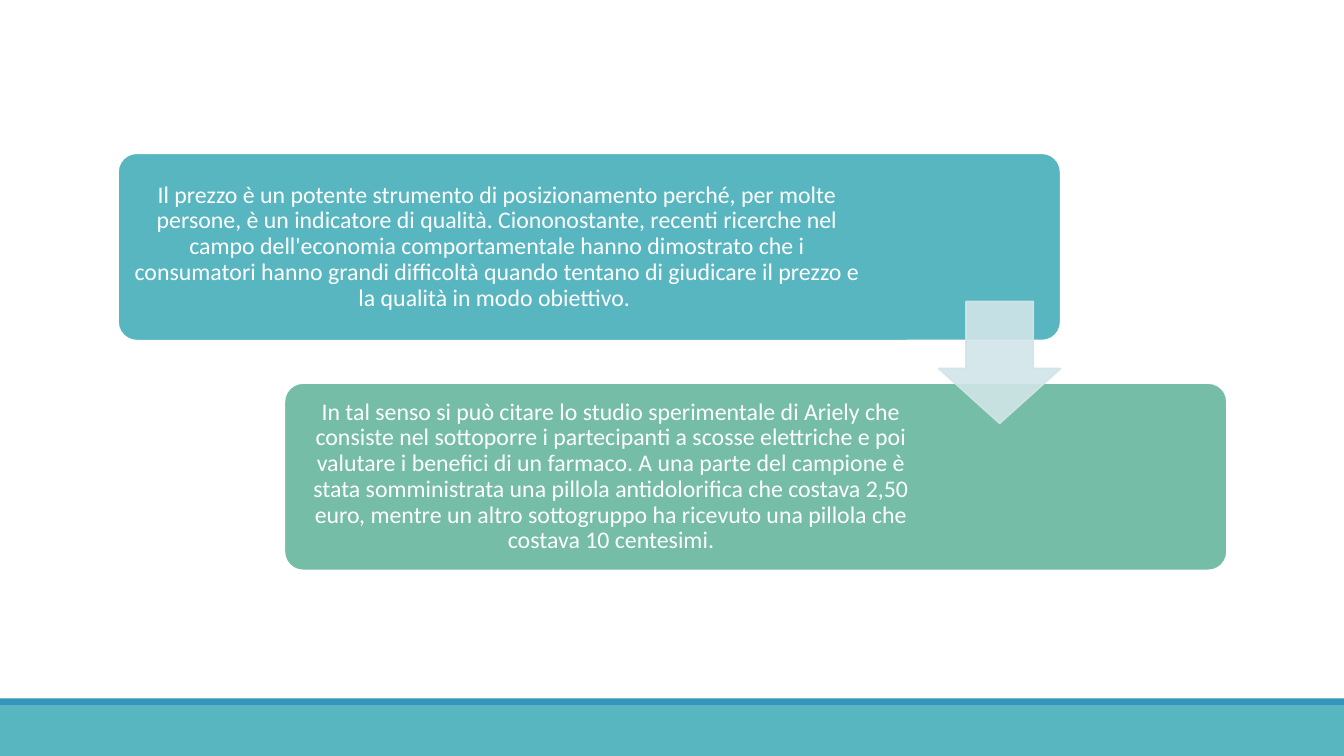
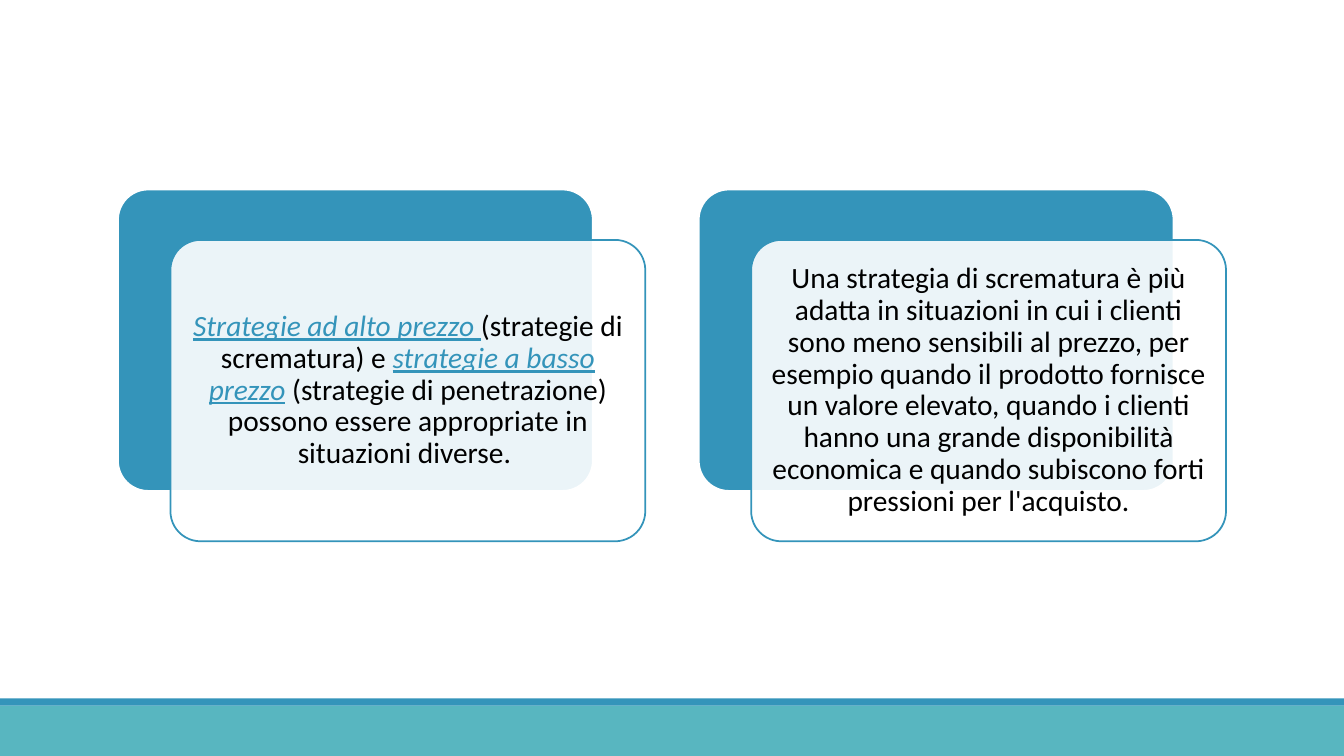
from dataclasses import dataclass

from lxml import etree
from pptx import Presentation
from pptx.dml.color import RGBColor
from pptx.enum.shapes import MSO_SHAPE
from pptx.enum.text import MSO_ANCHOR, PP_ALIGN
from pptx.oxml.ns import qn
from pptx.util import Inches, Pt

RECT = MSO_SHAPE.RECTANGLE
ROUND = MSO_SHAPE.ROUNDED_RECTANGLE
DOWN = MSO_SHAPE.DOWN_ARROW
CENTER = PP_ALIGN.CENTER
MIDDLE = MSO_ANCHOR.MIDDLE


@dataclass(frozen=True)
class Theme:
    blue: str = "3494BA"
    teal: str = "58B6C0"
    green: str = "75BDA7"
    pale: str = "D1E5E8"
    white: str = "FFFFFF"
    black: str = "000000"
    font: str = "Calibri"
    small: float = 17
    large: float = 21
    edge: float = 1.25
    sheer: int = 90


WIDTH, HEIGHT = 13.33, 7.5
LEFT = 1.17

STEPS = [
    ("Il prezzo è un potente strumento di posizionamento perché, per molte "
     "persone, è un indicatore di qualità. Ciononostante, recenti ricerche nel "
     "campo dell'economia comportamentale hanno dimostrato che i consumatori "
     "hanno grandi difficoltà quando tentano di giudicare il prezzo e la "
     "qualità in modo obiettivo. ", Theme.teal, 1.9),
    ("In tal senso si può citare lo studio sperimentale di Ariely che consiste "
     "nel sottoporre i partecipanti a scosse elettriche e poi valutare i "
     "benefici di un farmaco. A una parte del campione è stata somministrata "
     "una pillola antidolorifica che costava 2,50 euro, mentre un altro "
     "sottogruppo ha ricevuto una pillola che costava 10 centesimi.",
     Theme.green, 2.94),
]

# Each card is a list of (text, is a key term).
CARDS = [
    [("Strategie ad alto prezzo ", True),
     ("(strategie di scrematura) e ", False),
     ("strategie a basso prezzo", True),
     (" (strategie di penetrazione) possono essere appropriate in situazioni "
      "diverse. ", False)],
    [("Una strategia di scrematura è più adatta in situazioni in cui i clienti "
      "sono meno sensibili al prezzo, per esempio quando il prodotto fornisce "
      "un valore elevato, quando i clienti hanno una grande disponibilità "
      "economica e quando subiscono forti pressioni per l'acquisto.", False)],
]


def fade(part, alpha):
    """Make a solid fill or line partly transparent; alpha is in percent."""
    for color in part.iter(qn("a:srgbClr")):
        etree.SubElement(color, qn("a:alpha")).set("val", str(alpha * 1000))


class Deck:
    def __init__(self, theme):
        self.theme = theme
        self.prs = Presentation()
        self.prs.slide_width = Inches(WIDTH)
        self.prs.slide_height = Inches(HEIGHT)
        self.slide = None

    def start(self):
        """Add a slide with the bands at its foot."""
        self.slide = self.prs.slides.add_slide(self.prs.slide_layouts[6])
        self.shape(RECT, (0, 7, WIDTH, 0.5), self.theme.teal)
        self.shape(RECT, (0, 6.93, WIDTH, 0.07), self.theme.blue)

    def shape(self, kind, box, fill, line=None, adjust=()):
        shape = self.slide.shapes.add_shape(kind, *map(Inches, box))
        shape.shadow.inherit = False
        shape.fill.solid()
        shape.fill.fore_color.rgb = RGBColor.from_string(fill)
        if line:
            shape.line.color.rgb = RGBColor.from_string(line)
            shape.line.width = Pt(self.theme.edge)
        else:
            shape.line.fill.background()
        for i, value in enumerate(adjust):
            shape.adjustments[i] = value
        return shape

    def panel(self, box, fill, line):
        return self.shape(ROUND, box, fill, line, [0.1])

    def label(self, shape, runs, size, color, inset, right=None):
        """Fill a shape with one centred paragraph; key terms stand out."""
        frame = shape.text_frame
        frame.word_wrap = True
        frame.vertical_anchor = MIDDLE
        frame.margin_left = frame.margin_top = Inches(inset)
        frame.margin_bottom = Inches(inset)
        frame.margin_right = Inches(right or inset)
        para = frame.paragraphs[0]
        para.alignment = CENTER
        para.line_spacing = 0.9
        para.font.name = self.theme.font
        para.font.size = Pt(size)
        para.font.color.rgb = RGBColor.from_string(color)
        for text, key in runs:
            run = para.add_run()
            run.text = text
            if key:
                run.font.italic = run.font.underline = True
                run.font.color.rgb = RGBColor.from_string(self.theme.blue)

    def step(self, i, text, fill, right):
        box = (LEFT + 1.65 * i, 1.52 + 2.28 * i, 9.35, 1.86)
        panel = self.panel(box, fill, self.theme.white)
        self.label(panel, [(text, False)], self.theme.small,
                   self.theme.white, 0.07, right)

    def arrow(self, box):
        pale = self.theme.pale
        arrow = self.shape(DOWN, box, pale, pale, [0.55, 0.45])
        fade(arrow.element.spPr, self.theme.sheer)

    def card(self, i, runs):
        """Draw a sheer text panel offset from a solid one."""
        theme = self.theme
        left, top, size = LEFT + 5.76 * i, 1.88, (4.71, 2.99)
        self.panel((left, top, *size), theme.blue, theme.white)
        front = self.panel((left + 0.52, top + 0.5, *size),
                           theme.white, theme.blue)
        fade(front.element.spPr.find(qn("a:solidFill")), theme.sheer)
        self.label(front, runs, theme.large, theme.black, 0.09)


def main():
    deck = Deck(Theme())

    deck.start()
    for i, step in enumerate(STEPS):
        deck.step(i, *step)
    deck.arrow((9.31, 2.99, 1.21, 1.21))

    deck.start()
    for i, runs in enumerate(CARDS):
        deck.card(i, runs)

    deck.prs.save("out.pptx")


if __name__ == "__main__":
    main()
